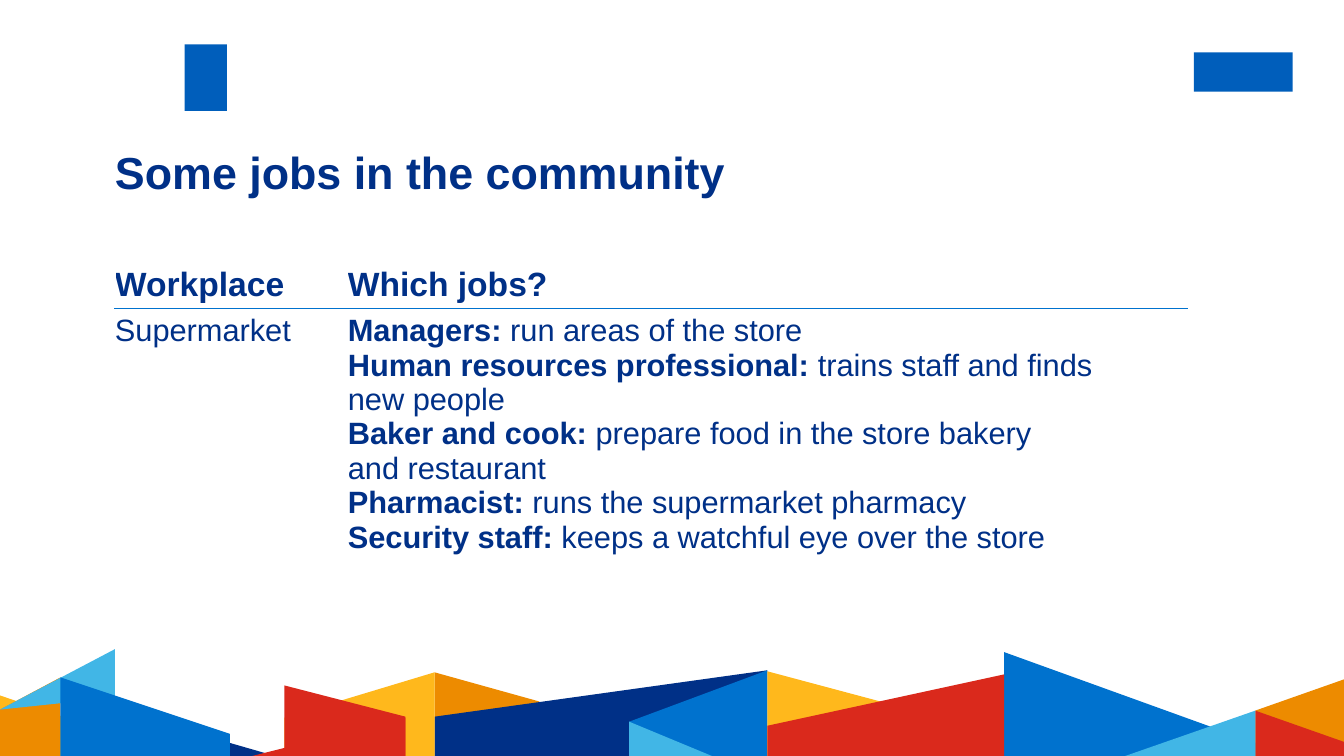
from lxml import etree
from pptx import Presentation
from pptx.dml.color import RGBColor
from pptx.enum import shapes, text
from pptx.oxml.ns import qn
from pptx.util import Inches, Pt

NAVY, BLUE, SKY = "003087", "0072CE", "41B6E6"
RED, AMBER, ORANGE = "DA291C", "FFB81C", "ED8B00"
LOGO_BLUE, WHITE = "005EBB", "FFFFFF"


def add_text(paragraph, wording, size=22, bold=False, color=NAVY, font="Arial"):
    """Append wording as runs, turning each newline into a line break."""
    for index, line in enumerate(wording.split("\n")):
        if index:
            paragraph.add_line_break()
        run = paragraph.add_run()
        run.text = line
        run.font.name = font
        run.font.size = Pt(size)
        run.font.bold = bold
        run.font.color.rgb = RGBColor.from_string(color)


def paint(shape, color):
    shape.shadow.inherit = False
    shape.fill.solid()
    shape.fill.fore_color.rgb = RGBColor.from_string(color)
    shape.line.fill.background()


deck = Presentation()
deck.slide_width, deck.slide_height = Inches(13.33), Inches(7.5)
slide = deck.slides.add_slide(deck.slide_layouts[5])

# Plain blocks in the two top corners
for box in [(1.83, 0.44, 0.42, 0.66), (11.84, 0.52, 0.98, 0.39)]:
    block = slide.shapes.add_shape(shapes.MSO_SHAPE.RECTANGLE, *map(Inches, box))
    paint(block, LOGO_BLUE)

# Skyline of facets along the bottom edge, back to front
FACETS = [
    (ORANGE, [(5.35, 7.21), (4.31, 7.5), (4.31, 6.67), (5.35, 6.96)]),
    (NAVY, [(7.61, 7.5), (4.31, 7.5), (4.31, 7.11), (7.61, 6.65)]),
    (ORANGE, [(13.33, 7.5), (12.45, 7.5), (12.45, 7.05), (13.33, 6.74)]),
    (AMBER, [(0.95, 7.22), (0.95, 7.5), (0, 7.5), (0, 6.9)]),
    (AMBER, [(4.31, 7.5), (2.82, 7.5), (2.82, 7.12), (4.31, 6.67)]),
    (ORANGE, [(0.6, 7.5), (0, 7.5), (0, 7.04), (0.6, 6.72)]),
    (RED, [(4.02, 7.11), (4.02, 7.5), (2.82, 7.5), (2.82, 6.8)]),
    (NAVY, [(2.73, 7.5), (1.76, 7.5), (1.76, 7.22)]),
    (RED, [(4.02, 7.5), (2.5, 7.5), (4.02, 7.12)]),
    (SKY, [(0, 7.04), (1.14, 6.44), (1.14, 6.92)]),
    (BLUE, [(2.28, 7.28), (2.28, 7.5), (0.6, 7.5), (0.6, 6.72)]),
    (BLUE, [(7.61, 7.5), (6.24, 7.5), (6.24, 7.16), (7.61, 6.65)]),
    (SKY, [(7.06, 7.5), (6.24, 7.5), (6.24, 7.16)]),
    (BLUE, [(12.45, 7.37), (12.45, 7.5), (9.96, 7.5), (9.96, 6.47)]),
    (RED, [(13.33, 7.36), (13.33, 7.5), (12.45, 7.5), (12.45, 7.05)]),
    (SKY, [(12.45, 7.5), (11.16, 7.5), (12.45, 7.05)]),
    (AMBER, [(8.92, 7.5), (7.61, 7.5), (7.61, 6.66), (8.92, 7.01)]),
    (RED, [(9.96, 7.5), (7.61, 7.5), (7.61, 7.2), (9.96, 6.69)]),
]
for color, corners in FACETS:
    start, *others = [(Inches(x), Inches(y)) for x, y in corners]
    outline = slide.shapes.build_freeform(*start)
    outline.add_line_segments(others, close=True)
    paint(outline.convert_to_shape(), color)

# Title
title = slide.shapes.title
title.left, title.top = Inches(1.14), Inches(1.44)
title.width, title.height = Inches(10.64), Inches(0.6)
heading = title.text_frame
heading.margin_left = heading.margin_right = 0
heading.margin_top = heading.margin_bottom = 0
heading.vertical_anchor = text.MSO_ANCHOR.MIDDLE
heading.paragraphs[0].alignment = text.PP_ALIGN.LEFT
heading.paragraphs[0].line_spacing = 0.9
add_text(heading.paragraphs[0], "Some jobs in the community", size=32, bold=True)

# Jobs table: each cell is a list of paragraphs, each a (bold part, plain part)
ROWS = [
    [[("Workplace", "")], [("Which jobs?", "")]],
    [
        [("", "Supermarket")],
        [
            ("Managers:", " run areas of the store"),
            ("Human resources professional:", " trains staff and finds \nnew people"),
            ("Baker and cook:", " prepare food in the store bakery \nand restaurant"),
            ("Pharmacist:", " runs the supermarket pharmacy"),
            ("Security staff:", " keeps a watchful eye over the store"),
        ],
    ],
]
jobs = slide.shapes.add_table(
    2, 2, Inches(1.14), Inches(2.59), Inches(10.64), Inches(3.17)
).table
jobs.first_row = jobs.horz_banding = False
jobs.columns[0].width, jobs.columns[1].width = Inches(2.31), Inches(8.33)
jobs.rows[0].height, jobs.rows[1].height = Inches(0.47), Inches(2.7)

for row, cells in enumerate(ROWS):
    size = 22 if row else 24
    rule_side = "lnT" if row else "lnB"
    for column, entries in enumerate(cells):
        cell = jobs.cell(row, column)
        cell.margin_left = 0
        cell.margin_right = 0 if column else Inches(0.1)
        cell.margin_top = cell.margin_bottom = Inches(0.05)
        properties = cell._tc.get_or_add_tcPr()
        for side in ("lnL", "lnR", "lnT", "lnB"):
            border = etree.SubElement(properties, qn(f"a:{side}"), w=str(Pt(1)))
            fill = etree.SubElement(border, qn("a:solidFill"))
            etree.SubElement(
                fill, qn("a:srgbClr"), val=BLUE if side == rule_side else WHITE
            )
        cell.fill.background()
        for index, (role, duty) in enumerate(entries):
            frame = cell.text_frame
            paragraph = frame.add_paragraph() if index else frame.paragraphs[0]
            if role:
                add_text(paragraph, role, size=size, bold=True)
            if duty:
                add_text(paragraph, duty, size=size)

deck.save("out.pptx")
